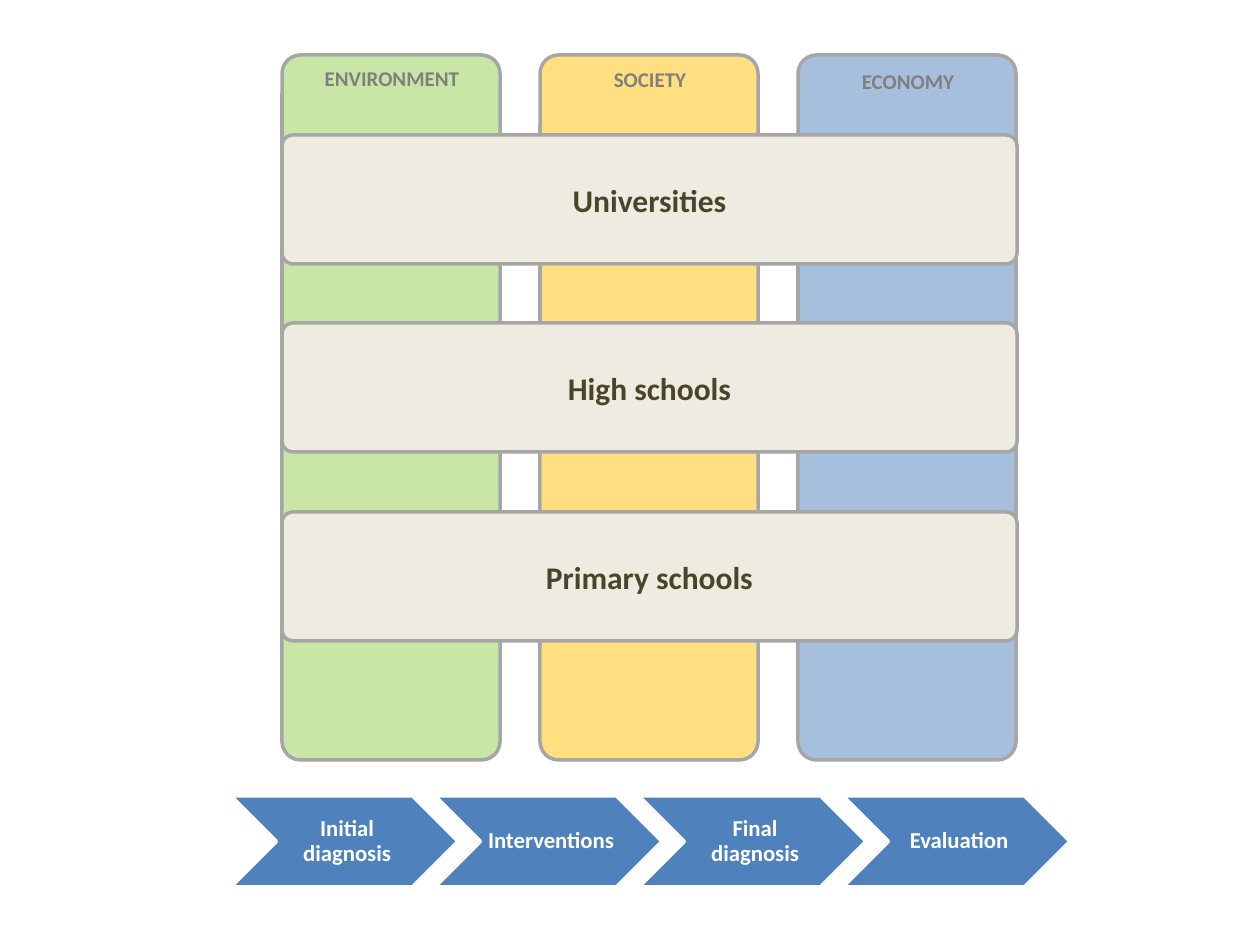
from lxml import etree
from pptx import Presentation
from pptx.dml.color import RGBColor
from pptx.enum.shapes import MSO_SHAPE
from pptx.enum.text import MSO_ANCHOR, PP_ALIGN
from pptx.oxml.ns import qn
from pptx.util import Pt

ROUND = MSO_SHAPE.ROUNDED_RECTANGLE
CHEVRON = MSO_SHAPE.CHEVRON
MIDDLE = MSO_ANCHOR.MIDDLE
TOP = MSO_ANCHOR.TOP
CENTER = PP_ALIGN.CENTER

GREEN = RGBColor(0x92, 0xD0, 0x50)
AMBER = RGBColor(0xFF, 0xC0, 0x00)
BLUE = RGBColor(0x4F, 0x81, 0xBD)
CREAM = RGBColor(0xEE, 0xEC, 0xE1)
BROWN = RGBColor(0x4A, 0x45, 0x2A)
SILVER = RGBColor(0xA6, 0xA6, 0xA6)
GRAY = RGBColor(0x80, 0x80, 0x80)
WHITE = RGBColor(0xFF, 0xFF, 0xFF)

LEFT = 282
COL_STEP = 258
PILLARS = [("ENVIRONMENT", GREEN, 59), ("SOCIETY", AMBER, 60), ("ECONOMY", BLUE, 62)]
LEVELS = ["Universities", "High schools", "Primary schools"]
STEPS = ["Initial diagnosis", "Interventions", "Final diagnosis", "Evaluation"]


def px(n):
    return round(n * 914400 / 126)


def add_block(slide, kind, box, fill, line):
    shape = slide.shapes.add_shape(kind, *map(px, box))
    shape.shadow.inherit = False
    shape.fill.solid()
    shape.fill.fore_color.rgb = fill
    shape.line.color.rgb = line
    shape.line.width = Pt(2)
    if kind == ROUND:
        shape.adjustments[0] = 0.085
    return shape


def fade(shape, percent):
    color = shape.fill._xPr.find(qn("a:solidFill"))[0]
    etree.SubElement(color, qn("a:alpha")).set("val", str(percent * 1000))


def set_text(shape, text, size, color, anchor=MIDDLE):
    frame = shape.text_frame
    frame.word_wrap = True
    frame.vertical_anchor = anchor
    frame.text = text
    para = frame.paragraphs[0]
    para.alignment = CENTER
    font = para.runs[0].font
    font.name = "Calibri"
    font.size = Pt(size)
    font.bold = True
    font.color.rgb = color
    return frame


def add_label(slide, box, text, size, color, anchor):
    shape = slide.shapes.add_textbox(*map(px, box))
    return set_text(shape, text, size, color, anchor)


def add_step(slide, left, text):
    add_block(slide, CHEVRON, (left, 796, 227, 91), BLUE, WHITE)
    frame = add_label(slide, (left + 45, 796, 137, 91), text, 13, WHITE, MIDDLE)
    frame.margin_left = px(7)
    frame.margin_right = frame.margin_top = frame.margin_bottom = px(2)
    frame.paragraphs[0].line_spacing = 0.9


def main():
    prs = Presentation()
    prs.slide_width = px(1260)
    prs.slide_height = px(945)
    slide = prs.slides.add_slide(prs.slide_layouts[6])
    for i, (name, color, top) in enumerate(PILLARS):
        box = (LEFT + i * COL_STEP, 55, 218, 705)
        fade(add_block(slide, ROUND, box, color, SILVER), 50)
    for i, name in enumerate(LEVELS):
        box = (LEFT, 135 + i * 377 // 2, 735, 129)
        set_text(add_block(slide, ROUND, box, CREAM, SILVER), name, 18, BROWN)
    for i, name in enumerate(STEPS):
        add_step(slide, 231 + i * 204, name)
    for i, (name, color, top) in enumerate(PILLARS):
        box = (LEFT + 17 + i * COL_STEP, top, 186, 38)
        add_label(slide, box, name, 12, GRAY, TOP)
    prs.save("out.pptx")


if __name__ == "__main__":
    main()
